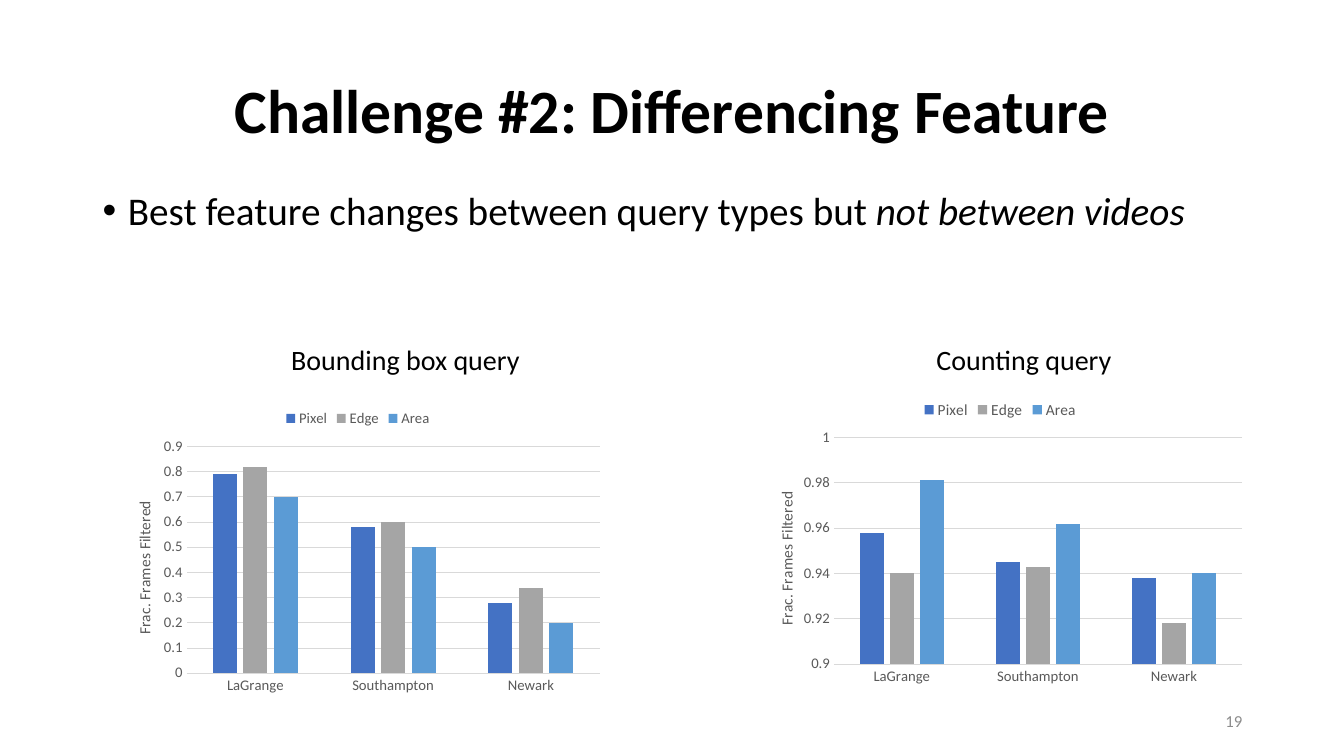
"""Build the slide comparing differencing features for two query types."""
from lxml import etree
from pptx import Presentation
from pptx.chart.data import CategoryChartData
from pptx.dml.color import RGBColor
from pptx.enum.chart import XL_CHART_TYPE, XL_LEGEND_POSITION, XL_TICK_MARK
from pptx.enum.text import MSO_ANCHOR, PP_ALIGN
from pptx.oxml import parse_xml
from pptx.oxml.ns import nsdecls, qn
from pptx.util import Inches, Pt

TITLE = "Challenge #2: Differencing Feature"
BULLET = [("Best feature changes between query types but ", False),
          ("not between videos", True)]
PAGE = "19"
AXIS_TITLE = "Frac. Frames Filtered"
VIDEOS = ["LaGrange", "Southampton", "Newark"]
FEATURES = ["Pixel", "Edge", "Area"]
QUERIES = [
    {"label": "Bounding box query", "label_box": (2.79, 3.35, 3.26, 0.44),
     "chart_at": (1.05, 3.95), "scale": (0, 0.9, 0.1), "legend_size": 10.5,
     "plot": {"x": 0.16, "y": 0.16, "w": 0.82, "h": 0.75},
     "values": [(0.79, 0.58, 0.28), (0.82, 0.6, 0.34), (0.7, 0.5, 0.2)]},
    {"label": "Counting query", "label_box": (9.19, 3.35, 2.7, 0.44),
     "chart_at": (7.42, 3.86), "scale": (0.9, 1, 0.02), "legend_size": 11,
     "plot": {"x": 0.17, "y": 0.16, "w": 0.81, "h": 0.75},
     "values": [(0.958, 0.945, 0.938), (0.94, 0.943, 0.918),
                (0.981, 0.962, 0.94)]},
]
CHART_SIZE = (5, 3)
AXIS_TITLE_AT = {"x": 0.05, "y": 0.33}
THEME = {
    "font": "Calibri", "text": "000000", "page": "8C8C8C",
    "chart_text": "595959", "grid": "D9D9D9",
    "series": ["4472C4", "A5A5A5", "5B9BD5"],
    "title_size": 44, "body_size": 28, "label_size": 20, "page_size": 12,
    "axis_size": 10.5, "axis_title_size": 11,
}


def style_font(font, size, color, bold=False, italic=False):
    """Apply the theme typeface with the given format."""
    font.name, font.size = THEME["font"], Pt(size)
    font.bold, font.italic = bold, italic
    font.color.rgb = RGBColor.from_string(color)


def add_text(slide, runs, box, size, color=THEME["text"], bold=False,
             align=PP_ALIGN.LEFT, anchor=MSO_ANCHOR.TOP, spacing=1.0,
             bullet=False):
    """Add a one-paragraph text box from (text, italic) runs."""
    tf = slide.shapes.add_textbox(*map(Inches, box)).text_frame
    tf.word_wrap, tf.vertical_anchor = True, anchor
    p = tf.paragraphs[0]
    p.alignment, p.line_spacing = align, spacing
    if bullet:
        pPr = p._p.get_or_add_pPr()
        pPr.set("marL", str(Inches(0.25)))
        pPr.set("indent", str(Inches(-0.25)))
        etree.SubElement(pPr, qn("a:buFont")).set("typeface", "Arial")
        etree.SubElement(pPr, qn("a:buChar")).set("char", "•")
    for text, italic in runs:
        r = p.add_run()
        r.text = text
        style_font(r.font, size, color, bold, italic)


def set_layout(element, index, fractions, inner=False):
    """Place a chart part by fractions of the chart's size."""
    for old in element.findall(qn("c:layout")):
        element.remove(old)
    layout = parse_xml(f"<c:layout {nsdecls('c')}><c:manualLayout/></c:layout>")
    settings = {"layoutTarget": "inner"} if inner else {}
    settings.update({"xMode": "edge", "yMode": "edge"}, **fractions)
    for name, value in settings.items():
        etree.SubElement(layout[0], qn(f"c:{name}")).set("val", str(value))
    element.insert(index, layout)


def add_query_chart(slide, query):
    """Add the clustered columns of one query type."""
    data = CategoryChartData()
    data.categories = VIDEOS
    for feature, values in zip(FEATURES, query["values"]):
        data.add_series(feature, values)
    box = map(Inches, query["chart_at"] + CHART_SIZE)
    chart = slide.shapes.add_chart(
        XL_CHART_TYPE.COLUMN_CLUSTERED, *box, data).chart
    style_font(chart.font, THEME["axis_size"], THEME["chart_text"])
    chart.has_title = False
    chart.has_legend = True
    chart.legend.position = XL_LEGEND_POSITION.TOP
    chart.legend.include_in_layout = False
    style_font(chart.legend.font, query["legend_size"], THEME["chart_text"])

    plot = chart.plots[0]
    plot.gap_width, plot.overlap, plot.vary_by_categories = 219, -27, False
    for series, color in zip(plot.series, THEME["series"]):
        series.format.fill.solid()
        series.format.fill.fore_color.rgb = RGBColor.from_string(color)

    cat, val = chart.category_axis, chart.value_axis
    for axis in (cat, val):
        axis.major_tick_mark = axis.minor_tick_mark = XL_TICK_MARK.NONE
        style_font(axis.tick_labels.font, THEME["axis_size"],
                   THEME["chart_text"])
    val.minimum_scale, val.maximum_scale, val.major_unit = query["scale"]
    val.format.line.fill.background()
    for line in (cat.format.line, val.major_gridlines.format.line):
        line.color.rgb = RGBColor.from_string(THEME["grid"])
        line.width = Pt(0.75)

    tf = val.axis_title.text_frame
    tf._txBody.bodyPr.set("rot", "-5400000")
    tf._txBody.bodyPr.set("vert", "horz")
    r = tf.paragraphs[0].add_run()
    r.text = AXIS_TITLE
    style_font(r.font, THEME["axis_title_size"], THEME["chart_text"])
    set_layout(val.axis_title._element, 1, AXIS_TITLE_AT)
    set_layout(chart._chartSpace.chart.plotArea, 0, query["plot"], inner=True)


def main():
    """Compose and save the slide."""
    prs = Presentation()
    prs.slide_width, prs.slide_height = Inches(13.33), Inches(7.5)
    s = prs.slides.add_slide(prs.slide_layouts[6])
    add_text(s, [(TITLE, False)], (0.92, 0.4, 11.5, 1.45),
             THEME["title_size"], bold=True, align=PP_ALIGN.CENTER,
             anchor=MSO_ANCHOR.MIDDLE, spacing=0.9)
    add_text(s, BULLET, (0.92, 1.85, 11.5, 0.68), THEME["body_size"],
             spacing=0.9, bullet=True)
    add_text(s, [(PAGE, False)], (9.42, 6.95, 3, 0.4), THEME["page_size"],
             color=THEME["page"], align=PP_ALIGN.RIGHT,
             anchor=MSO_ANCHOR.MIDDLE)
    for query in QUERIES:
        add_text(s, [(query["label"], False)], query["label_box"],
                 THEME["label_size"])
        add_query_chart(s, query)
    prs.save("out.pptx")


if __name__ == "__main__":
    main()
